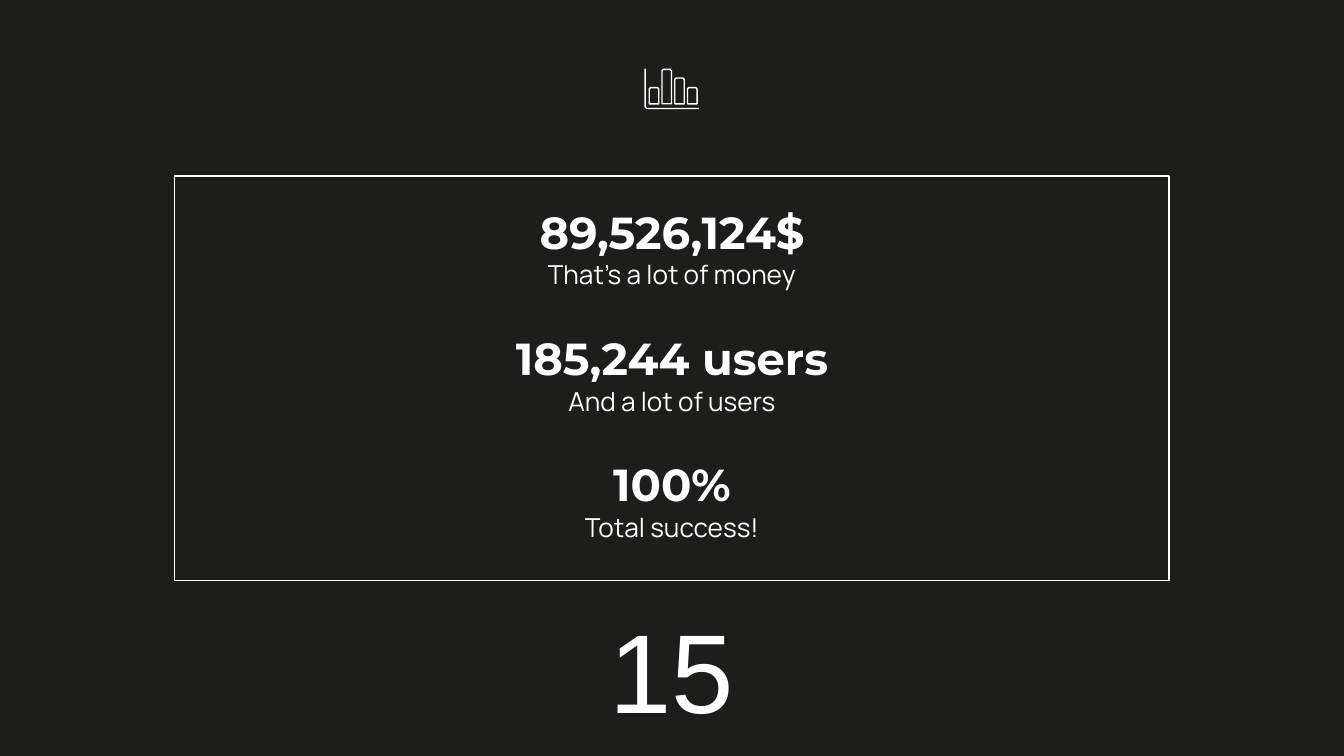
from pptx import Presentation
from pptx.dml.color import RGBColor
from pptx.enum.shapes import MSO_SHAPE
from pptx.enum.text import MSO_ANCHOR, MSO_AUTO_SIZE, PP_ALIGN
from pptx.util import Pt

RECTANGLE = MSO_SHAPE.RECTANGLE
TOP, MIDDLE, BOTTOM = MSO_ANCHOR.TOP, MSO_ANCHOR.MIDDLE, MSO_ANCHOR.BOTTOM
NO_FIT = MSO_AUTO_SIZE.NONE
CENTER = PP_ALIGN.CENTER
DARK = RGBColor(0x1D, 0x1D, 0x1B)
WHITE = RGBColor(0xFF, 0xFF, 0xFF)

FIGURES = [
    ("89,526,124$", "That’s a lot of money"),
    ("185,244 users", "And a lot of users"),
    ("100%", "Total success!"),
]
PAGE_NUMBER = "15"
LEFT, WIDTH = 93.6, 532.8
FRAME_TOP, FRAME_HEIGHT = 94.32, 216.72
FIGURE_TOP, CAPTION_OFFSET, FIGURE_STEP = 74.88, 54, 67.68

AXIS = [(345.6, 36.7), (345.6, 57.2), (346.5, 58.1), (374.4, 58.1)]
BAR_TOPS = [46.9, 37.2, 41.8, 46.9]
BAR_LEFT, BAR_STEP, BAR_WIDTH, BAR_BOTTOM = 347.8, 6.85, 5.1, 55.6
CORNER = 0.7


def style_outline(shape):
    """Give a shape a thin white outline with no fill."""
    shape.shadow.inherit = False
    shape.fill.background()
    shape.line.color.rgb = WHITE
    shape.line.width = Pt(0.75)


def draw_path(page, points, close):
    """Draw an outline through points."""
    corners = [(Pt(x), Pt(y)) for x, y in points]
    builder = page.shapes.build_freeform(*corners[0])
    builder.add_line_segments(corners[1:], close=close)
    style_outline(builder.convert_to_shape())


def draw_icon(page):
    """Draw the bar chart icon."""
    draw_path(page, AXIS, False)
    for index, top in enumerate(BAR_TOPS):
        left = BAR_LEFT + index * BAR_STEP
        right = left + BAR_WIDTH
        draw_path(page, [
            (right, BAR_BOTTOM), (right, top + CORNER), (right - CORNER, top),
            (left + CORNER, top), (left, top + CORNER), (left, BAR_BOTTOM),
        ], True)


def add_box(page, top, height):
    """Add a text box as wide as the frame."""
    return page.shapes.add_textbox(Pt(LEFT), Pt(top), Pt(WIDTH), Pt(height))


def write_text(box, text, font_name, size, anchor, bold=False):
    """Write one centred line and return its paragraph."""
    frame = box.text_frame
    frame.word_wrap = True
    frame.auto_size = NO_FIT
    frame.vertical_anchor = anchor
    frame.margin_left = frame.margin_right = Pt(7.2)
    frame.margin_top = frame.margin_bottom = Pt(7.2)
    para = frame.paragraphs[0]
    para.text = text
    para.alignment = CENTER
    para.font.name = font_name
    para.font.size = Pt(size)
    para.font.bold = bold
    para.font.color.rgb = WHITE
    return para


def main():
    """Build and save the big figures slide."""
    deck = Presentation()
    deck.slide_width, deck.slide_height = Pt(720), Pt(405)
    page = deck.slides.add_slide(deck.slide_layouts[5])
    page.background.fill.solid()
    page.background.fill.fore_color.rgb = DARK

    style_outline(page.shapes.add_shape(
        RECTANGLE, Pt(LEFT), Pt(FRAME_TOP), Pt(WIDTH), Pt(FRAME_HEIGHT)))

    for index, (figure, caption) in enumerate(FIGURES):
        top = FIGURE_TOP + index * FIGURE_STEP
        if index == 0:
            box = page.shapes.title
            box.left, box.top = Pt(LEFT), Pt(top)
            box.width, box.height = Pt(WIDTH), Pt(70.56)
        else:
            box = add_box(page, top, 70.56)
        write_text(box, figure, "Montserrat", 24, BOTTOM, True)
        box = add_box(page, top + CAPTION_OFFSET, 36.72)
        para = write_text(box, caption, "Manrope", 14, TOP)
        para.line_spacing = 1.15
        para.space_before = Pt(6)

    number_top = FRAME_TOP + FRAME_HEIGHT
    write_text(add_box(page, number_top, 94), PAGE_NUMBER, "Arial", 60, MIDDLE)
    draw_icon(page)
    deck.save("out.pptx")


if __name__ == "__main__":
    main()
